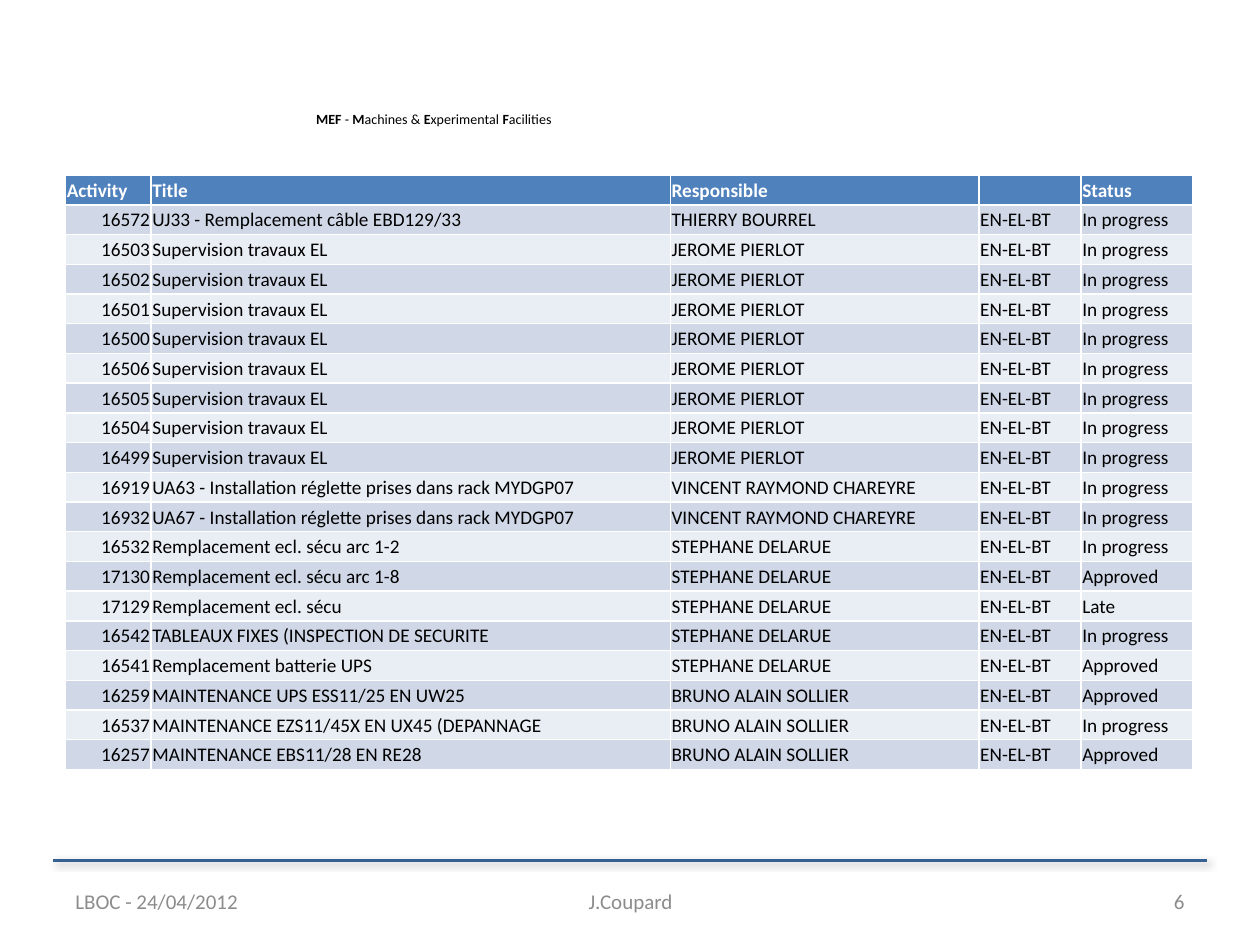
import lxml.etree
import pptx
import pptx.dml.color
import pptx.enum.shapes
import pptx.enum.text
import pptx.oxml
import pptx.oxml.ns
import pptx.util

Inches = pptx.util.Inches
Pt = pptx.util.Pt
RGBColor = pptx.dml.color.RGBColor
Align = pptx.enum.text.PP_ALIGN
Anchor = pptx.enum.text.MSO_ANCHOR

BLACK = RGBColor(0x00, 0x00, 0x00)
WHITE = RGBColor(0xFF, 0xFF, 0xFF)
GREY = RGBColor(0x8C, 0x8C, 0x8C)
RULE_BLUE = RGBColor(0x37, 0x60, 0x92)
HEADER_BLUE = RGBColor(0x4F, 0x81, 0xBD)
DARK_BAND = RGBColor(0xD0, 0xD8, 0xE8)
LIGHT_BAND = RGBColor(0xE9, 0xED, 0xF4)

HEADERS = ["Activity", "Title", "Responsible", "", "Status"]
COLUMN_WIDTHS = [0.68, 4.12, 2.45, 0.81, 0.89]
ROW_HEIGHT = 4.72 / 20
UNIT = "EN-EL-BT"
SUPERVISION = ("Supervision travaux EL", "JEROME PIERLOT", "In progress")
ACTIVITIES = [
    (16572, "UJ33 - Remplacement câble EBD129/33", "THIERRY BOURREL", "In progress"),
    *[(number, *SUPERVISION)
      for number in (16503, 16502, 16501, 16500, 16506, 16505, 16504, 16499)],
    (16919, "UA63 - Installation réglette prises dans rack MYDGP07",
     "VINCENT RAYMOND CHAREYRE", "In progress"),
    (16932, "UA67 - Installation réglette prises dans rack MYDGP07",
     "VINCENT RAYMOND CHAREYRE", "In progress"),
    (16532, "Remplacement ecl. sécu arc 1-2", "STEPHANE DELARUE", "In progress"),
    (17130, "Remplacement ecl. sécu arc 1-8", "STEPHANE DELARUE", "Approved"),
    (17129, "Remplacement ecl. sécu", "STEPHANE DELARUE", "Late"),
    (16542, "TABLEAUX FIXES (INSPECTION DE SECURITE", "STEPHANE DELARUE", "In progress"),
    (16541, "Remplacement batterie UPS", "STEPHANE DELARUE", "Approved"),
    (16259, "MAINTENANCE UPS ESS11/25 EN UW25", "BRUNO ALAIN SOLLIER", "Approved"),
    (16537, "MAINTENANCE EZS11/45X EN UX45 (DEPANNAGE", "BRUNO ALAIN SOLLIER", "In progress"),
    (16257, "MAINTENANCE EBS11/28 EN RE28", "BRUNO ALAIN SOLLIER", "Approved"),
]


def set_font(para, size, color):
    para.font.name = "Calibri"
    para.font.size = Pt(size)
    para.font.color.rgb = color


deck = pptx.Presentation()
deck.slide_width = Inches(10)
deck.slide_height = Inches(7.5)
page = deck.slides.add_slide(deck.slide_layouts[6])

footer_rule = page.shapes.add_connector(
    pptx.enum.shapes.MSO_CONNECTOR.STRAIGHT,
    Inches(0.42), Inches(6.83), Inches(9.58), Inches(6.83))
footer_rule.line.color.rgb = RULE_BLUE
footer_rule.line.width = Pt(1.5)
footer_rule._element.spPr.append(pptx.oxml.parse_xml(
    f'<a:effectLst {pptx.oxml.ns.nsdecls("a")}>'
    f'<a:outerShdw blurRad="{Pt(4)}" dist="{Pt(2)}" dir="2700000" rotWithShape="0">'
    '<a:srgbClr val="000000"><a:alpha val="40000"/></a:srgbClr>'
    '</a:outerShdw></a:effectLst>'))

group_box = page.shapes.add_textbox(Inches(2.41), Inches(0.83), Inches(2.09), Inches(0.24))
group_box.text_frame.word_wrap = False
group_box.text_frame.auto_size = pptx.enum.text.MSO_AUTO_SIZE.SHAPE_TO_FIT_TEXT
group_para = group_box.text_frame.paragraphs[0]
set_font(group_para, 8, BLACK)
for text, bold in [("MEF ", True), ("- ", False), ("M", True), ("achines & ", False),
                   ("E", True), ("xperimental ", False), ("F", True), ("acilities", False)]:
    span = group_para.add_run()
    span.text = text
    span.font.bold = bold

for text, left, width, alignment in [
        ("LBOC - 24/04/2012", 0.5, 2.33, Align.LEFT),
        ("J.Coupard", 3.42, 3.17, Align.CENTER),
        ("6", 7.17, 2.33, Align.RIGHT)]:
    footer_box = page.shapes.add_textbox(Inches(left), Inches(6.95), Inches(width), Inches(0.4))
    footer_box.text_frame.word_wrap = True
    footer_box.text_frame.vertical_anchor = Anchor.MIDDLE
    para = footer_box.text_frame.paragraphs[0]
    para.text = text
    para.alignment = alignment
    set_font(para, 12, GREY)

rows = [HEADERS] + [(str(number), title, person, UNIT, status)
                    for number, title, person, status in ACTIVITIES]
table = page.shapes.add_table(
    len(rows), len(HEADERS), Inches(0.52), Inches(1.39),
    Inches(sum(COLUMN_WIDTHS)), Inches(ROW_HEIGHT * len(rows))).table
for column, width in zip(table.columns, COLUMN_WIDTHS):
    column.width = Inches(width)

for row_index, values in enumerate(rows):
    table.rows[row_index].height = Inches(ROW_HEIGHT)
    is_header = row_index == 0
    band = HEADER_BLUE if is_header else DARK_BAND if row_index % 2 else LIGHT_BAND
    for column_index, value in enumerate(values):
        cell = table.cell(row_index, column_index)
        cell.fill.solid()
        cell.fill.fore_color.rgb = band
        cell.vertical_anchor = Anchor.MIDDLE
        cell.margin_left = cell.margin_right = cell.margin_top = Inches(0.01)
        cell.margin_bottom = 0
        para = cell.text_frame.paragraphs[0]
        para.alignment = Align.RIGHT if column_index == 0 and not is_header else Align.LEFT
        set_font(para, 11, WHITE if is_header else BLACK)
        para.font.bold = is_header
        if value:
            para.text = value
        else:
            lxml.etree.SubElement(para._p, pptx.oxml.ns.qn("a:endParaRPr"), sz="1100")

deck.save("out.pptx")
